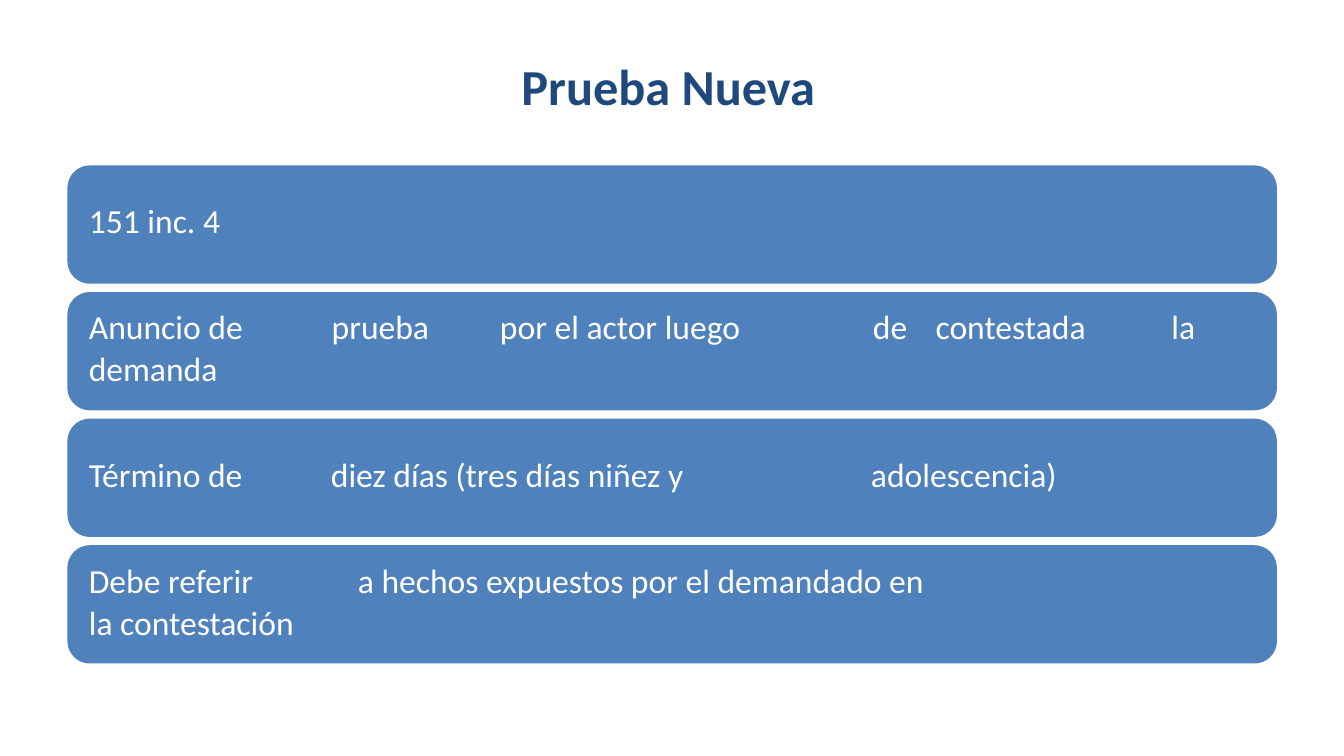
from pptx import Presentation
from pptx.dml.color import RGBColor
from pptx.enum import shapes
from pptx.util import Cm, Pt

BLUE = RGBColor(0x4F, 0x81, 0xBC)
NAVY = RGBColor(0x1F, 0x49, 0x7D)
WHITE = RGBColor(0xFF, 0xFF, 0xFF)

deck = Presentation()
deck.slide_width = Cm(33.87)
deck.slide_height = Cm(19.05)
slide = deck.slides.add_slide(deck.slide_layouts[6])


def write(words, left, top, width, height, size, lead, color, bold=False):
    box = slide.shapes.add_textbox(Cm(left), Cm(top), Cm(width), Cm(height))
    frame = box.text_frame
    frame.word_wrap = True
    frame.margin_left = frame.margin_right = 0
    frame.margin_top = frame.margin_bottom = 0
    frame.text = words
    for line in frame.paragraphs:
        line.line_spacing = Pt(lead)
        line.font.name = "Calibri"
        line.font.size = Pt(size)
        line.font.bold = bold
        line.font.color.rgb = color


for row in range(4):
    bar = slide.shapes.add_shape(
        shapes.MSO_SHAPE.ROUNDED_RECTANGLE,
        Cm(1.7), Cm(4.17 + 3.19 * row), Cm(30.48), Cm(2.98))
    bar.adjustments[0] = 0.19
    bar.shadow.inherit = False
    bar.fill.solid()
    bar.fill.fore_color.rgb = BLUE
    bar.line.fill.background()

rows = [
    (5.01, [("151 inc. 4", 2.24, 5.26)]),
    (7.67, [("Anuncio de\ndemanda", 2.24, 6.12),
            ("prueba", 8.36, 3.96),
            ("por el actor luego", 12.6, 9.37),
            ("de", 22, 1.6),
            ("contestada", 23.58, 5.99),
            ("la", 29.52, 1.19)]),
    (11.41, [("Término de", 2.24, 6.1),
             ("diez días (tres días niñez y", 8.34, 13.61),
             ("adolescencia)", 21.95, 7.34)]),
    (14.07, [("Debe referir", 2.24, 6.5),
             ("a hechos expuestos por el demandado en", 9.02, 21.69)]),
    (15.12, [("la contestación", 2.24, 23.24)]),
]
for top, parts in rows:
    for words, left, width in parts:
        tall = 1.05 * (words.count("\n") + 1)
        write(words, left, top, width, tall, 24, 29.8, WHITE)

write("Prueba Nueva", 13.14, 1.73, 8.31, 1.63, 36, 33.6, NAVY, True)

deck.save("out.pptx")
